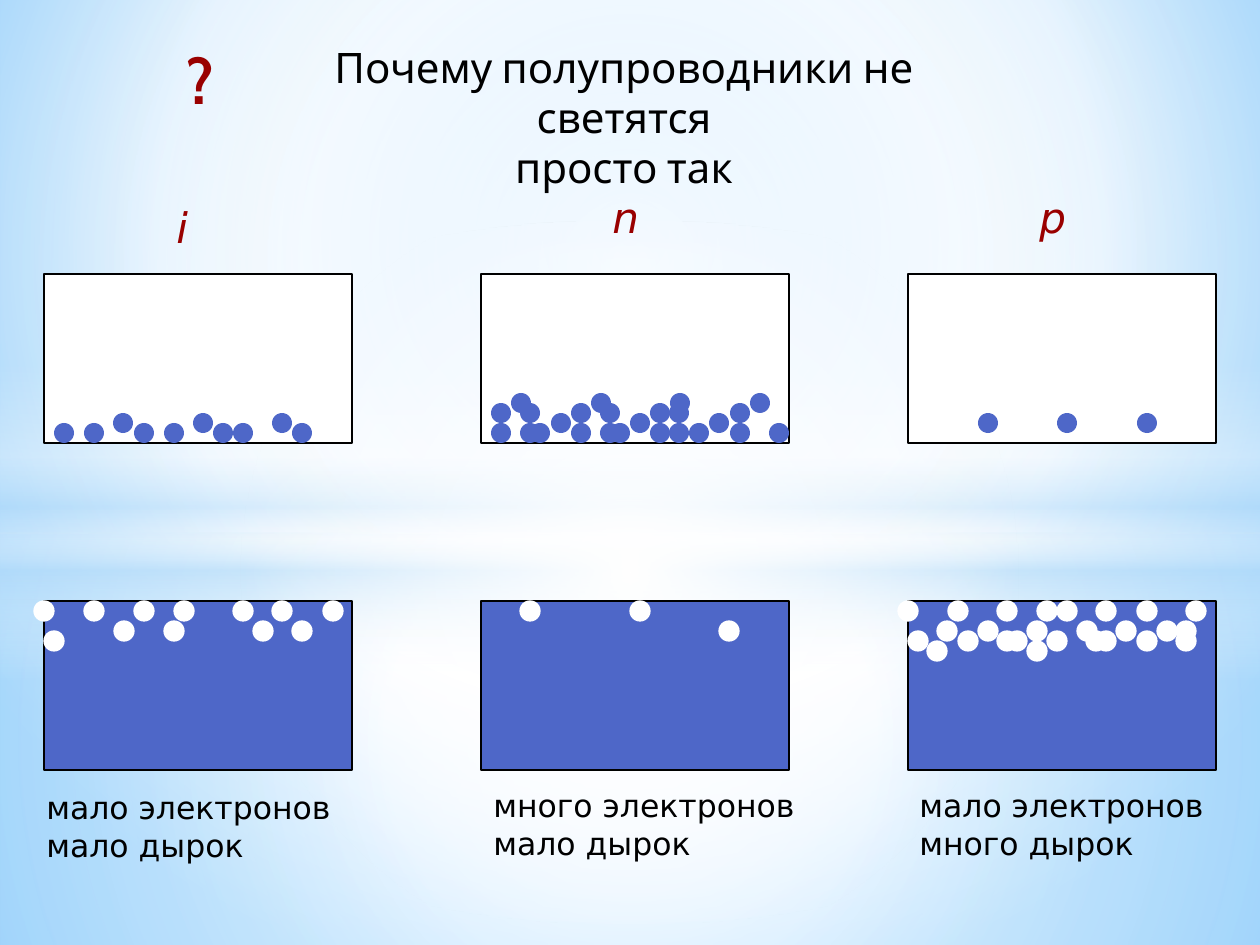
import pptx
import pptx.util
import pptx.dml.color
import pptx.enum.shapes
import pptx.enum.text
import pptx.oxml
import pptx.oxml.ns

PX = 914400 / 126
COLORS = {"white": "FFFFFF", "black": "000000", "blue": "4E67C8", "red": "990000",
          "sky": "B4DCFA", "sky_inner": "9ED5FF", "sky_outer": "5BB9FF"}
RGB = {name: pptx.dml.color.RGBColor.from_string(value) for name, value in COLORS.items()}
MSO = pptx.enum.shapes.MSO_SHAPE
ALIGN = pptx.enum.text.PP_ALIGN


def add_shape(kind, box, color, line=None):
    s = slide.shapes.add_shape(kind, *[round(v * PX) for v in box])
    s.shadow.inherit = False
    if color:
        s.fill.solid()
        s.fill.fore_color.rgb = RGB[color]
    if line:
        s.line.color.rgb = RGB[line]
        s.line.width = pptx.util.Pt(0.75)
    else:
        s.line.fill.background()
    return s


def set_gradient(owner, fill, stops, direction):
    fill.gradient()
    old = owner.find(".//" + pptx.oxml.ns.qn("a:gradFill"))
    gs = "".join(
        f'<a:gs pos="{pos * 1000}"><a:srgbClr val="{COLORS[color]}">'
        f'<a:alpha val="{alpha * 1000}"/></a:srgbClr></a:gs>'
        for pos, color, alpha in stops)
    if isinstance(direction, int):
        tail = f'<a:lin ang="{direction * 60000}" scaled="0"/>'
    else:
        l, t, r, b = [v * 1000 for v in direction]
        tail = f'<a:path path="circle"><a:fillToRect l="{l}" t="{t}" r="{r}" b="{b}"/></a:path>'
    new = pptx.oxml.parse_xml(
        f'<a:gradFill {pptx.oxml.ns.nsdecls("a")} rotWithShape="1">'
        f'<a:gsLst>{gs}</a:gsLst>{tail}</a:gradFill>')
    old.getparent().replace(old, new)


prs = pptx.Presentation()
prs.slide_width = round(1260 * PX)
prs.slide_height = round(945 * PX)
slide = prs.slides.add_slide(prs.slide_layouts[6])

set_gradient(slide.element, slide.background.fill,
             [(0, "sky_inner", 100), (60, "white", 100), (100, "sky_outer", 100)],
             (20, 10, 20, 60))

centre = (50, 50, 50, 50)
glows = [
    (MSO.RECTANGLE, (0, 533, 1260, 412),
     [(0, "white", 91), (37, "white", 76), (100, "sky", 79)], centre),
    (MSO.RECTANGLE, (0, 0, 1260, 533),
     [(0, "white", 89), (48, "white", 62), (100, "sky", 79)], centre),
    (MSO.RECTANGLE, (0, 365, 1260, 315),
     [(0, "white", 0), (29, "white", 30), (45, "sky", 40),
      (55, "white", 26), (65, "sky", 60), (100, "white", 0)], 90),
    (MSO.OVAL, (0, 221, 1260, 703), [(0, "white", 100), (54, "white", 0)], centre),
]
for kind, box, stops, direction in glows:
    s = add_shape(kind, box, None)
    set_gradient(s.element, s.fill, stops, direction)

for x in (44, 481, 908):
    add_shape(MSO.RECTANGLE, (x, 274, 308, 169), "white", "black")
    add_shape(MSO.RECTANGLE, (x, 601, 308, 169), "blue", "black")

electrons = {
    393: [511, 591, 670, 750],
    403: [491, 520, 571, 600, 650, 669, 730],
    413: [113, 193, 272, 551, 630, 709, 978, 1057, 1137],
    423: [54, 84, 134, 164, 213, 233, 292,
          491, 520, 530, 571, 600, 610, 650, 669, 689, 730, 769],
}
holes = {
    601: [34, 84, 134, 174, 233, 272, 323, 520, 630,
          898, 948, 997, 1037, 1057, 1096, 1137, 1186],
    621: [114, 164, 253, 292, 719, 937, 978, 1027, 1077, 1116, 1157, 1176],
    631: [44, 908, 958, 997, 1007, 1047, 1086, 1096, 1137, 1176],
    641: [927, 1027],
}
for rows, color, line in ((electrons, "blue", None), (holes, "white", "white")):
    for y, xs in rows.items():
        for x in xs:
            add_shape(MSO.OVAL, (x, y, 20, 20), color, line)

title = {"name": "Cabin", "size": pptx.util.Pt(24)}
question = {"name": "Cabin", "size": pptx.util.Pt(36), "bold": True}
symbol = {"name": "DejaVu Sans", "size": pptx.util.Pt(24), "italic": True}
caption = {"name": "DejaVu Sans", "size": pptx.util.Pt(18)}
texts = [
    ((253, 35, 742, 113), ["Почему полупроводники не светятся", "просто так"],
     title, "black", ALIGN.CENTER),
    ((174, 35, 53, 88), ["?"], question, "red", ALIGN.LEFT),
    ((164, 195, 37, 63), ["i"], symbol, "red", ALIGN.LEFT),
    ((600, 185, 52, 63), ["n"], symbol, "red", ALIGN.LEFT),
    ((1027, 185, 52, 63), ["p"], symbol, "red", ALIGN.LEFT),
    ((34, 782, 318, 88), ["мало электронов", "мало дырок"], caption, "black", ALIGN.LEFT),
    ((481, 780, 338, 88), ["много электронов", "мало дырок"], caption, "black", ALIGN.LEFT),
    ((907, 780, 338, 88), ["мало электронов", "много дырок"], caption, "black", ALIGN.LEFT),
]
for box, lines, style, color, align in texts:
    tf = slide.shapes.add_textbox(*[round(v * PX) for v in box]).text_frame
    tf.word_wrap = True
    tf.auto_size = pptx.enum.text.MSO_AUTO_SIZE.SHAPE_TO_FIT_TEXT
    for i, line in enumerate(lines):
        p = tf.add_paragraph() if i else tf.paragraphs[0]
        p.alignment = align
        r = p.add_run()
        r.text = line
        r.font.color.rgb = RGB[color]
        for key, value in style.items():
            setattr(r.font, key, value)

prs.save("out.pptx")
